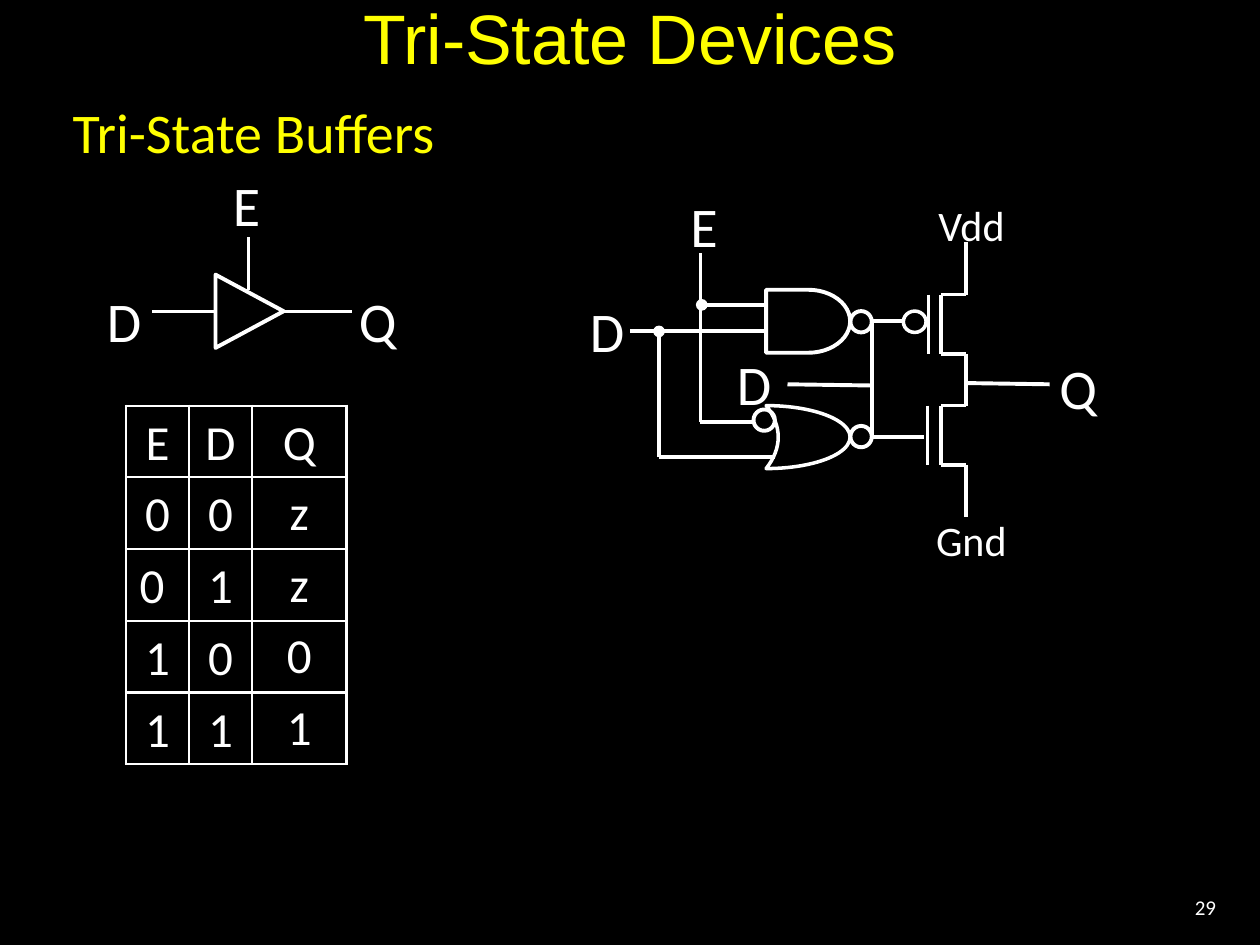
import pptx
import pptx.util
import pptx.dml.color
import pptx.enum.shapes
import pptx.enum.text
import pptx.oxml.ns
import lxml.etree

Pt = pptx.util.Pt
MSO = pptx.enum.shapes.MSO_SHAPE
ALIGN = pptx.enum.text.PP_ALIGN
ANCHOR = pptx.enum.text.MSO_ANCHOR
qn = pptx.oxml.ns.qn

COLORS = {"back": "000000", "ink": "FFFFFF", "title": "FFFF00"}
FONT = "Calibri"
THICK, THIN = 2.25, 2


def rgb(name):
    return pptx.dml.color.RGBColor.from_string(COLORS[name])


def add_run(p, text, size, color="ink", font=FONT):
    r = p.add_run()
    r.text = text
    r.font.size = Pt(size)
    r.font.name = font
    r.font.color.rgb = rgb(color)


def add_text(s, box, text, size, color="ink", font=FONT, align=ALIGN.LEFT,
             anchor=ANCHOR.TOP, wrap=False, spacing=None):
    sp = s.shapes.add_textbox(*map(Pt, box))
    tf = sp.text_frame
    tf.word_wrap = wrap
    tf.vertical_anchor = anchor
    p = tf.paragraphs[0]
    p.alignment = align
    p.line_spacing = spacing
    add_run(p, text, size, color, font)


def add_line(s, x1, y1, x2, y2, width=THICK, dot=False):
    sp = s.shapes.add_connector(pptx.enum.shapes.MSO_CONNECTOR.STRAIGHT,
                                Pt(x1), Pt(y1), Pt(x2), Pt(y2))
    sp.line.color.rgb = rgb("ink")
    sp.line.width = Pt(width)
    if dot:
        head = lxml.etree.SubElement(sp.line._get_or_add_ln(), qn("a:headEnd"))
        head.set("type", "oval")
    lxml.etree.SubElement(sp._element.spPr, qn("a:effectLst"))


def add_outline(s, kind, x, y, w, h, width=THICK):
    sp = s.shapes.add_shape(kind, Pt(x), Pt(y), Pt(w), Pt(h))
    sp.shadow.inherit = False
    sp.fill.background()
    sp.line.color.rgb = rgb("ink")
    sp.line.width = Pt(width)
    return sp


def buffer_symbol(s, x, y):
    sp = add_outline(s, MSO.ISOSCELES_TRIANGLE, x + 67.7, y + 64.4, 41.8, 38.9)
    sp.rotation = 90
    add_line(s, x + 69, y + 84, x + 33, y + 84)
    add_line(s, x + 147, y + 84, x + 108, y + 84)
    add_line(s, x + 88, y + 71.6, x + 88, y + 41.4)
    for text, dx, dy, w in (("E", 72, 0, 30), ("D", 0, 66, 34.6), ("Q", 144, 66, 48)):
        add_text(s, (x + dx, y + dy, w, 46), text, 32)


def transistor(s, x, y, gate):
    """Channel bar with source and drain stubs, and a gate bar beside it."""
    h = 33.9
    add_line(s, x, y, x, y + h, THIN)
    add_line(s, x - gate, y, x - gate, y + h, THIN)
    for stub in (y, y + h):
        add_line(s, x, stub, x + 14, stub, THIN)


def gate_circuit(s, x, y):
    # Gates and their inverting bubbles
    add_outline(s, MSO.FLOWCHART_DELAY, x + 107.8, y + 59.6, 48, 36)
    sp = add_outline(s, MSO.MOON, x + 107.8, y + 125.8, 48, 36, THIN)
    sp.adjustments[0] = 0.856
    sp._element.spPr.find(qn("a:xfrm")).set("flipH", "1")
    for dx, dy, w, width in ((156, 137.4, 12.2, THICK), (156, 71.8, 12.2, THICK),
                             (100.6, 128, 12.2, THICK), (186.2, 71.8, 13, THIN)):
        add_outline(s, MSO.OVAL, x + dx, y + dy, w, 12.2, width)

    # Input wires, with dots where they branch
    e, d, out, drain = 70.3, 46.6, 168.2, 222
    wires = (
        (e, 38.7, e, 135.2), (100.6, 135.2, e, 135.2),
        (107.8, 83.4, 30, 83.4), (112.8, 155.4, d, 155.4),
        # Gate outputs
        (186.2, 77.6, out, 77.6), (197.8, 143.8, out, 143.8),
        (out, 143.8, out, 77.6), (out, 114.3, 120, 113.6),
        (269.8, 113.6, drain, 112.9),
    )
    branches = ((d, 83.4, d, 155.4), (e + 0.7, 68.2, 107.8, 68.2))
    for group, dot in ((wires, False), (branches, True)):
        for x1, y1, x2, y2 in group:
            add_line(s, x + x1, y + y1, x + x2, y + y2, dot=dot)

    # Transistor pair between supply and ground
    transistor(s, x + 207.8, y + 62.4, 7.2)
    transistor(s, x + 207.8, y + 125.8, 7.9)
    for top, bottom in ((32.2, 62.4), (96.3, 125.8), (159.7, 189.2)):
        add_line(s, x + drain, y + top, x + drain, y + bottom, THIN)

    # Labels
    for text, dx, dy, w in (("E", 57.4, 0, 30), ("D", 0, 59.6, 34.6),
                            ("D", 84, 90, 34.6), ("Q", 268.3, 92.7, 48)):
        add_text(s, (x + dx, y + dy, w, 46), text, 32)
    for text, dx, dy, w in (("Vdd", 199.2, 0, 52.6), ("Gnd", 197.8, 179.8, 54.7)):
        add_text(s, (x + dx, y + dy, w, 39), text, 24, spacing=1.16)


def border_cell(cell):
    tc_pr = cell._tc.get_or_add_tcPr()
    for i, side in enumerate(("a:lnL", "a:lnR", "a:lnT", "a:lnB")):
        ln = lxml.etree.Element(qn(side), w=str(Pt(1.42)))
        fill = lxml.etree.SubElement(ln, qn("a:solidFill"))
        lxml.etree.SubElement(fill, qn("a:srgbClr"), val=COLORS["ink"])
        tc_pr.insert(i, ln)


def truth_table(s, x, y):
    rows = (("E", "D", "Q"), ("0", "0", "z"), ("0 ", "1", "z"),
            ("1", "0", "0"), ("1", "1", "1"))
    widths, height = (36, 36, 54), 41
    table = s.shapes.add_table(len(rows), len(widths), Pt(x), Pt(y),
                               Pt(sum(widths)), Pt(height * len(rows))).table
    table.first_row = table.horz_banding = False
    for column, width in zip(table.columns, widths):
        column.width = Pt(width)
    for i, values in enumerate(rows):
        table.rows[i].height = Pt(height)
        for j, value in enumerate(values):
            cell = table.cell(i, j)
            cell.fill.background()
            cell.vertical_anchor = ANCHOR.MIDDLE
            p = cell.text_frame.paragraphs[0]
            p.alignment = ALIGN.CENTER
            if i == 0 or j < 2:  # results keep the default spacing
                cell.margin_top = Pt(5.76)
                p.line_spacing = 0.93
                p.space_before = Pt(7)
            add_run(p, value, 28)
            border_cell(cell)


def main():
    prs = pptx.Presentation()
    prs.slide_width, prs.slide_height = Pt(720), Pt(540)
    s = prs.slides.add_slide(prs.slide_layouts[6])
    s.background.fill.solid()
    s.background.fill.fore_color.rgb = rgb("back")

    # Headings and page number
    add_text(s, (30, 0, 660, 42), "Tri-State Devices", 40, "title", "Arial",
             ALIGN.CENTER, ANCHOR.MIDDLE, True)
    add_text(s, (34.5, 52, 224, 46), "Tri-State Buffers", 32, "title")
    add_text(s, (642, 504, 60, 29), "29", 12, align=ALIGN.RIGHT,
             anchor=ANCHOR.MIDDLE, wrap=True)

    buffer_symbol(s, 54, 94)
    gate_circuit(s, 330, 106)
    truth_table(s, 72, 231.8)
    prs.save("out.pptx")


if __name__ == "__main__":
    main()
